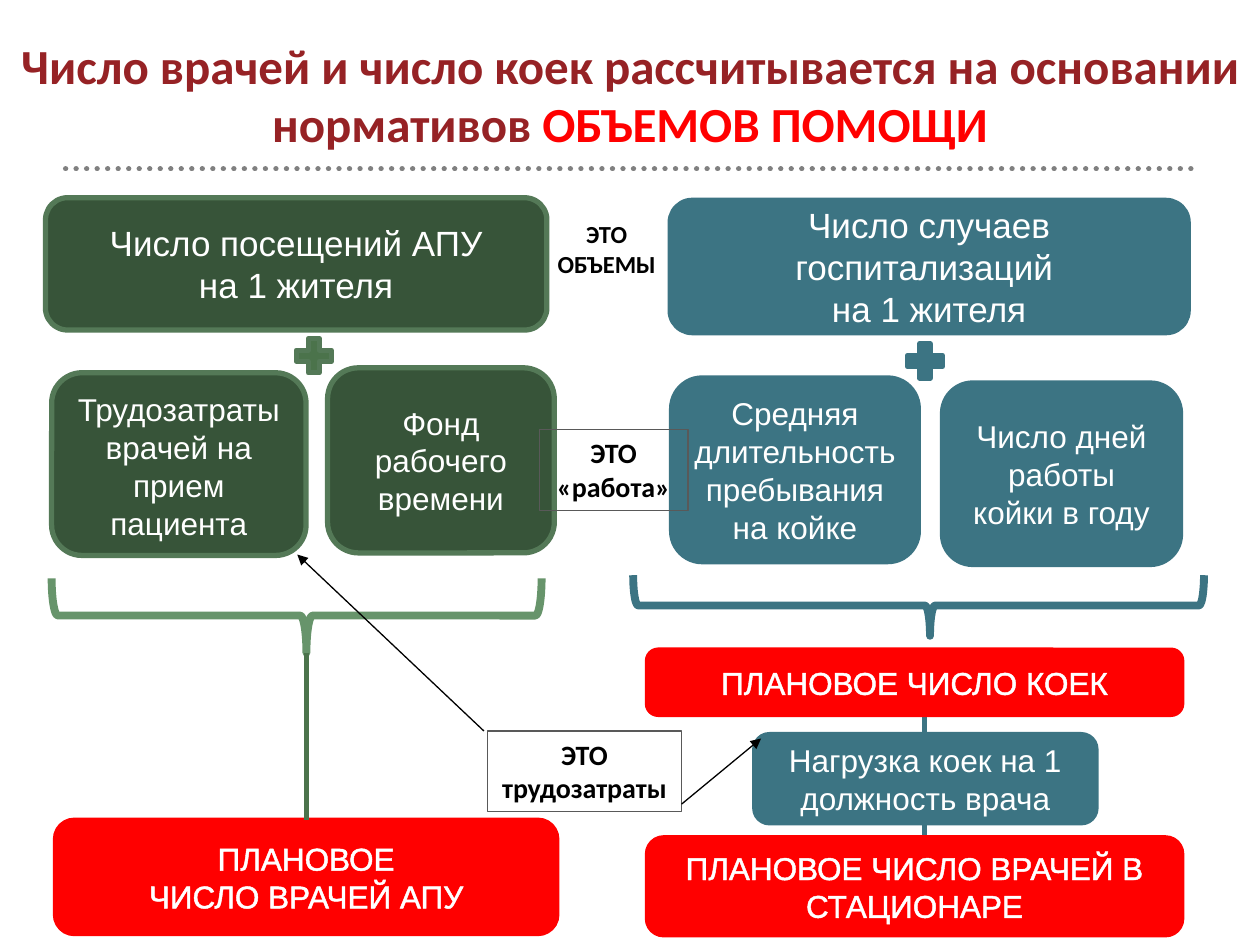
from pptx import Presentation
from pptx.dml.color import RGBColor
from pptx.enum.dml import MSO_LINE
from pptx.enum.shapes import MSO_CONNECTOR, MSO_SHAPE
from pptx.enum.text import MSO_ANCHOR, PP_ALIGN
from pptx.oxml.xmlchemy import OxmlElement
from pptx.util import Pt

COLORS = {
    "title": "962225", "red": "FF0000", "white": "FFFFFF", "black": "000000",
    "dots": "808080", "frame": "595959",
    "forest": "375439", "moss": "547957", "leaf": "4B734B", "sage": "67946B",
    "teal": "3C7483",
}


def rgb(name):
    """Return the palette colour with this name."""
    return RGBColor.from_string(COLORS[name])


def outline_text(run, color):
    """Give the letters of a run a thin outline."""
    line = OxmlElement("a:ln")
    line.set("w", str(Pt(0.75)))
    fill = OxmlElement("a:solidFill")
    value = OxmlElement("a:srgbClr")
    value.set("val", COLORS[color])
    fill.append(value)
    line.append(fill)
    run.font._element.insert(0, line)


def write(frame, paragraphs, anchor=MSO_ANCHOR.MIDDLE, font="Arial", bold=False, outline=None):
    """Write centred paragraphs, each a list of (text, size, color) runs."""
    frame.word_wrap = True
    frame.vertical_anchor = anchor
    for index, parts in enumerate(paragraphs):
        paragraph = frame.paragraphs[0] if index == 0 else frame.add_paragraph()
        paragraph.alignment = PP_ALIGN.CENTER
        for text, size, color in parts:
            run = paragraph.add_run()
            run.text = text
            run.font.name = font
            run.font.size = Pt(size)
            run.font.bold = bold
            run.font.color.rgb = rgb(color)
            if outline:
                outline_text(run, outline)


def add_figure(slide, preset, box, fill, line, width=3):
    """Add a flat preset shape in a (left, top, width, height) box."""
    figure = slide.shapes.add_shape(preset, *map(Pt, box))
    figure.shadow.inherit = False
    if fill:
        figure.fill.solid()
        figure.fill.fore_color.rgb = rgb(fill)
    else:
        figure.fill.background()
    figure.line.color.rgb = rgb(line)
    figure.line.width = Pt(width)
    return figure


def add_card(slide, box, lines, fill, line, size=18, outline=None):
    """Add a rounded card with white text, one paragraph for each line."""
    card = add_figure(slide, MSO_SHAPE.ROUNDED_RECTANGLE, box, fill, line)
    write(card.text_frame, [[(text, size, "white")] for text in lines], outline=outline)


def add_result(slide, box, lines):
    """Add a red card for a planned number."""
    add_card(slide, box, lines, "red", "red", outline="white")


def add_brace(slide, left, top, width, height, color):
    """Add a brace that opens upwards and fills the given box."""
    frame = (left + (width - height) / 2, top + (height - width) / 2, height, width)
    brace = add_figure(slide, MSO_SHAPE.RIGHT_BRACE, frame, None, color, 4.5)
    brace.rotation = 90
    brace.adjustments[0] = 0.083
    brace.adjustments[1] = 0.48


def add_line(slide, start, end, color, width=3, arrow=False):
    """Add a straight line, with an arrowhead at its end if asked."""
    line = slide.shapes.add_connector(MSO_CONNECTOR.STRAIGHT, *map(Pt, (*start, *end)))
    line.line.color.rgb = rgb(color)
    line.line.width = Pt(width)
    if arrow:
        head = OxmlElement("a:tailEnd")
        head.set("type", "triangle")
        line.line._get_or_add_ln().append(head)
    line._element.spPr.append(OxmlElement("a:effectLst"))
    return line


def add_heading(slide, left, top, width, height):
    """Add the title with the dotted rule below it."""
    rule_top = top + 96.5
    rule = add_line(slide, (left + 37.5, rule_top), (left + width - 36, rule_top), "dots")
    rule.line.dash_style = MSO_LINE.ROUND_DOT
    rule.line._get_or_add_ln().set("cap", "rnd")
    title = slide.shapes.add_textbox(*map(Pt, (left, top, width, height)))
    write(title.text_frame, [[
        ("Число врачей и число коек рассчитывается на основании нормативов ", 28, "title"),
        ("ОБЪЕМОВ ПОМОЩИ", 28, "red"),
    ]], font="Calibri", bold=True)


def add_outpatient(slide, left, top):
    """Add the column that leads to the number of outpatient doctors."""
    def at(x, y, width, height):
        return left + x, top + y, width, height

    add_result(slide, at(5.7, 355.7, 286.5, 64.8), ["ПЛАНОВОЕ", "ЧИСЛО ВРАЧЕЙ АПУ"])
    add_card(slide, at(0, 0, 286.5, 75.6), ["Число посещений АПУ", "на 1 жителя"],
             "forest", "moss", 20)
    add_card(slide, at(161.2, 97.2, 129.6, 105.8), ["Фонд рабочего времени"], "forest", "moss")
    labour = add_figure(slide, MSO_SHAPE.ROUNDED_RECTANGLE, at(3.5, 100, 145.4, 104.4),
                        "forest", "moss")
    write(labour.text_frame, [[("Трудозатраты", 18, "white"), (" ", 20, "white"),
                               ("врачей на прием пациента", 18, "white")]])
    add_brace(slide, *at(3.5, 217.5, 280, 42.5), "sage")
    add_figure(slide, MSO_SHAPE.MATH_PLUS, at(139.6, 77, 27.4, 26.6), "leaf", "moss")
    add_line(slide, (left + 149, top + 260), (left + 149, top + 355.7), "leaf")


def add_inpatient(slide, left, top):
    """Add the column that leads to the numbers of beds and hospital doctors."""
    def at(x, y, width, height):
        return left + x, top + y, width, height

    add_line(slide, (left + 158.5, top + 294.2), (left + 158.5, top + 364.8), "teal")
    add_result(slide, at(0, 364.8, 305.3, 55.4), ["ПЛАНОВОЕ ЧИСЛО ВРАЧЕЙ В СТАЦИОНАРЕ"])
    add_result(slide, at(0, 257.5, 305.3, 36.7), ["ПЛАНОВОЕ ЧИСЛО КОЕК"])
    factors = [
        ((168.6, 104.9, 136, 103.7), ["Число дней работы койки в году"], 18),
        ((13.8, 102, 141, 105), ["Средняя длительность пребывания на койке"], 18),
        ((61.3, 305.8, 195, 50.4), ["Нагрузка коек на 1 должность врача"], 18),
        ((13, 0.5, 296, 75.6), ["Число случаев госпитализаций ", "на 1 жителя"], 20),
    ]
    for box, lines, size in factors:
        add_card(slide, at(*box), lines, "teal", "teal", size)
    add_brace(slide, *at(-8.2, 214.7, 326.2, 34.6), "teal")
    add_figure(slide, MSO_SHAPE.MATH_PLUS, at(144.8, 79, 27.4, 26.6), "teal", "teal")


def add_notes_between(slide, left, top):
    """Add the captions between the columns and the arrows from the last one."""
    captions = [
        ((31, 0, 74.2, 41), ["ЭТО ОБЪЕМЫ"], 14, False),
        ((0, 296, 110.9, 46), ["ЭТО трудозатраты"], 16, True),
        ((29.5, 123.9, 85, 46), ["ЭТО", "«работа»"], 16, True),
    ]
    for (x, y, width, height), lines, size, framed in captions:
        box = (left + x, top + y, width, height)
        if framed:
            caption = add_figure(slide, MSO_SHAPE.RECTANGLE, box, None, "frame", 0.75)
        else:
            caption = slide.shapes.add_textbox(*map(Pt, box))
        write(caption.text_frame, [[(text, size, "black")] for text in lines],
              MSO_ANCHOR.TOP, "Calibri", True)
    for start, end in [((-2.1, 296), (-108.7, 195.2)), ((110.9, 337.8), (156.3, 300.3))]:
        add_line(slide, (left + start[0], top + start[1]), (left + end[0], top + end[1]),
                 "black", 0.75, arrow=True)


def main():
    """Build the slide and save it."""
    deck = Presentation()
    deck.slide_width, deck.slide_height = Pt(720), Pt(540)
    slide = deck.slides.add_slide(deck.slide_layouts[6])
    add_heading(slide, 0, 0, 720, 107.3)
    add_outpatient(slide, 26, 113)
    add_inpatient(slide, 370, 114)
    add_notes_between(slide, 278.6, 121.7)
    deck.save("out.pptx")


if __name__ == "__main__":
    main()
